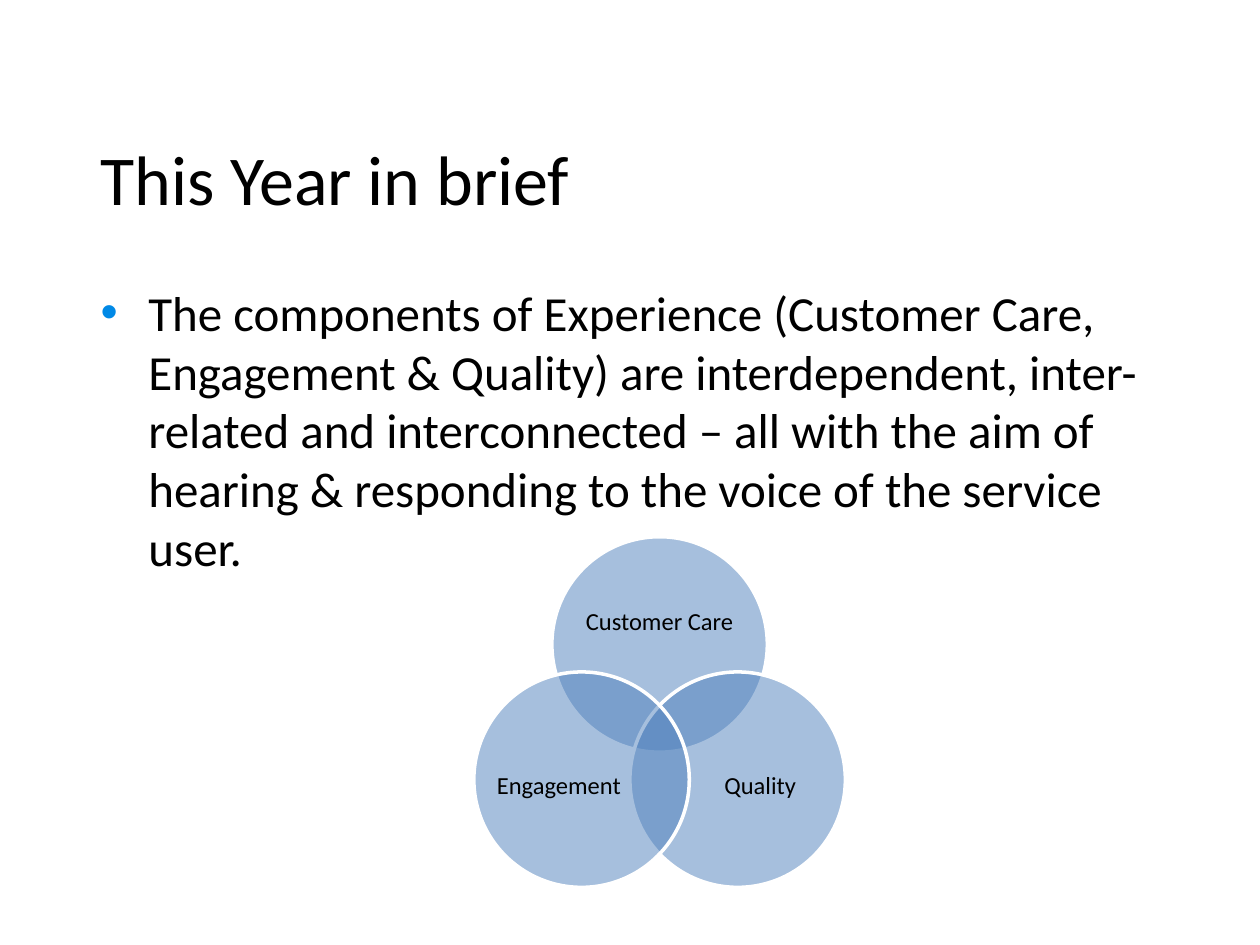
import math
from dataclasses import dataclass

from lxml import etree
from pptx import Presentation
from pptx import util as u
from pptx.dml.color import RGBColor
from pptx.enum import shapes, text
from pptx.oxml.ns import qn


@dataclass(frozen=True)
class Theme:
    font: str = "Calibri"
    ink: str = "000000"
    accent: str = "0089E6"
    circle: str = "4F81BD"
    outline: str = "FFFFFF"
    opacity: int = 50
    title_size: int = 40
    body_size: int = 28
    label_size: int = 14


class SlideBuilder:
    COLUMNS, ROWS = 100, 75

    def __init__(self, deck, theme):
        self.theme = theme
        self.slide = deck.slides.add_slide(deck.slide_layouts[6])
        self.column = deck.slide_width / self.COLUMNS
        self.row = deck.slide_height / self.ROWS

    def place(self, left, top, width, height):
        return (round(left * self.column), round(top * self.row),
                round(width * self.column), round(height * self.row))

    def text(self, area, wording, size, anchor=text.MSO_ANCHOR.MIDDLE,
             align=text.PP_ALIGN.LEFT, bullet=False, inset=True, spacing=1.0):
        frame = self.slide.shapes.add_textbox(*self.place(*area)).text_frame
        frame.word_wrap = True
        frame.vertical_anchor = anchor
        if not inset:
            frame.margin_left = frame.margin_right = 0
            frame.margin_top = frame.margin_bottom = 0
        paragraph = frame.paragraphs[0]
        if bullet:
            self.bullet(paragraph)
        paragraph.alignment = align
        paragraph.line_spacing = spacing
        run = paragraph.add_run()
        run.text = wording
        run.font.name = self.theme.font
        run.font.size = u.Pt(size)
        run.font.color.rgb = RGBColor.from_string(self.theme.ink)

    def bullet(self, paragraph):
        properties = paragraph._p.get_or_add_pPr()
        indent = u.Inches(0.38)
        properties.set("marL", str(indent))
        properties.set("indent", str(-indent))
        colour = etree.SubElement(properties, qn("a:buClr"))
        etree.SubElement(colour, qn("a:srgbClr"), val=self.theme.accent)
        etree.SubElement(properties, qn("a:buFont"), typeface="Arial")
        etree.SubElement(properties, qn("a:buChar"), char="•")

    def circle(self, x, y, diameter):
        area = self.place(x - diameter / 2, y - diameter / 2, diameter, diameter)
        circle = self.slide.shapes.add_shape(shapes.MSO_SHAPE.OVAL, *area)
        circle.shadow.inherit = False
        circle.fill.solid()
        circle.fill.fore_color.rgb = RGBColor.from_string(self.theme.circle)
        colour = circle._element.spPr.find(qn("a:solidFill"))[0]
        etree.SubElement(colour, qn("a:alpha"), val=str(self.theme.opacity * 1000))
        circle.line.color.rgb = RGBColor.from_string(self.theme.outline)
        circle.line.width = u.Pt(2)

    def venn(self, centre, spread, diameter, members):
        for index, (wording, shift, size) in enumerate(members):
            angle = math.radians(-90 + index * 360 / len(members))
            x = centre[0] + spread * math.cos(angle)
            y = centre[1] + spread * math.sin(angle)
            self.circle(x, y, diameter)
            left = x + shift[0] - size[0] / 2
            top = y + shift[1] - size[1] / 2
            self.text((left, top, *size), wording, self.theme.label_size,
                      align=text.PP_ALIGN.CENTER, inset=False, spacing=0.9)


def main():
    deck = Presentation()
    deck.slide_width, deck.slide_height = u.Inches(10), u.Inches(7.5)
    theme = Theme()
    page = SlideBuilder(deck, theme)
    page.text((7, 7.8, 86.9, 12.5), "This Year in brief", theme.title_size)
    page.text(
        (7, 21.9, 86.7, 45.1),
        "The components of Experience (Customer Care, Engagement & Quality) are "
        "interdependent, inter-related and interconnected – all with the aim of "
        "hearing & responding to the voice of the service user.",
        theme.body_size, anchor=text.MSO_ANCHOR.TOP, bullet=True)
    page.venn((52.35, 58.3), 7.15, 17.1, [
        ("Customer Care", (0, -1.7), (12.5, 7.7)),
        ("Quality", (1.8, 0.55), (10.3, 9.4)),
        ("Engagement", (-1.8, 0.55), (10.3, 9.4)),
    ])
    deck.save("out.pptx")


if __name__ == "__main__":
    main()
